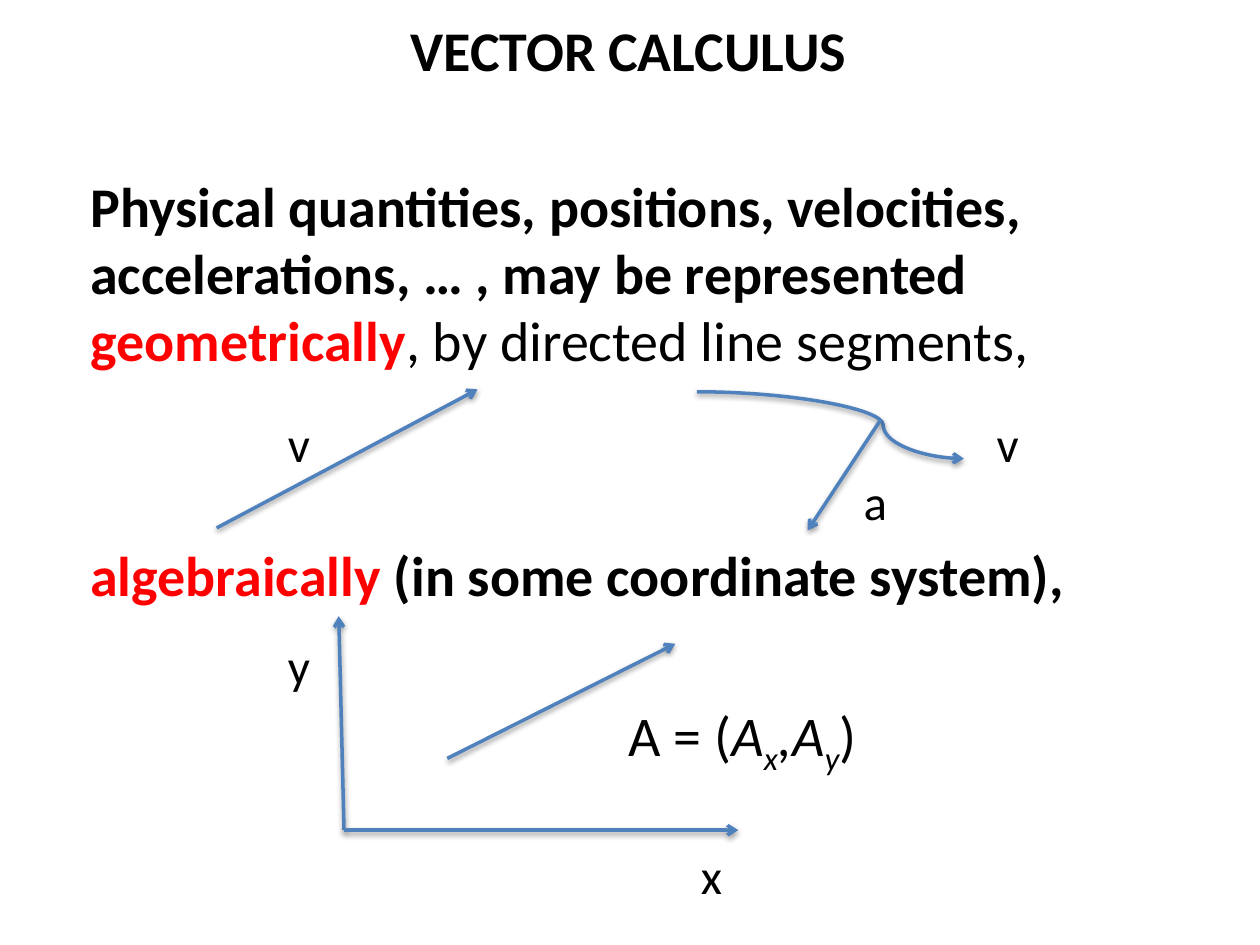
from lxml.etree import SubElement
from pptx import Presentation
from pptx.dml.color import RGBColor
from pptx.enum.shapes import MSO_CONNECTOR
from pptx.enum.text import MSO_ANCHOR, PP_ALIGN
from pptx.oxml.ns import qn
from pptx.util import Pt

FONT = "Calibri"
BLACK, RED, BLUE = "000000", "FF0000", "4F81BD"


def color(hex_code):
    """Turn a hex string into a colour."""
    return RGBColor.from_string(hex_code)


def add_run(paragraph, text, size=32, ink=BLACK, bold=False, italic=False, subscript=False):
    """Append one formatted run to a paragraph."""
    run = paragraph.add_run()
    run.text = text
    font = run.font
    font.name, font.size, font.bold, font.italic = FONT, Pt(size), bold, italic
    font.color.rgb = color(ink)
    if subscript:
        run._r.get_or_add_rPr().set("baseline", "-25000")


def add_text(slide, left, top, width, height, wrap=False):
    """Add a text box and return its first paragraph."""
    frame = slide.shapes.add_textbox(Pt(left), Pt(top), Pt(width), Pt(height)).text_frame
    frame.word_wrap = wrap
    return frame.paragraphs[0]


def add_label(slide, text, left, top):
    """Add a one-letter label."""
    add_run(add_text(slide, left, top, 28, 42), text, size=28)


def add_arrow(slide, origin, start, end, kind=MSO_CONNECTOR.STRAIGHT):
    """Draw a shadowed arrow between two points relative to an origin."""
    left, top = origin
    arrow = slide.shapes.add_connector(
        kind, Pt(left + start[0]), Pt(top + start[1]), Pt(left + end[0]), Pt(top + end[1]))
    arrow.line.color.rgb = color(BLUE)
    arrow.line.width = Pt(2)
    properties = arrow._element.spPr
    SubElement(properties.find(qn("a:ln")), qn("a:tailEnd"), type="arrow")
    effects = SubElement(properties, qn("a:effectLst"))
    shadow = SubElement(effects, qn("a:outerShdw"), blurRad="40000", dist="20000",
                        dir="5400000", rotWithShape="0")
    shade = SubElement(shadow, qn("a:srgbClr"), val=BLACK)
    SubElement(shade, qn("a:alpha"), val="38000")
    return arrow


def place_title(slide, left, top, width, height):
    """Move and format the title."""
    title = slide.shapes.title
    title.left, title.top, title.width, title.height = map(Pt, (left, top, width, height))
    title.text_frame.vertical_anchor = MSO_ANCHOR.MIDDLE
    heading = title.text_frame.paragraphs[0]
    heading.alignment = PP_ALIGN.CENTER
    add_run(heading, "VECTOR CALCULUS", bold=True)


def place_geometric(slide, left, top, width):
    """Place the geometric statement with its velocity and acceleration arrows."""
    statement = add_text(slide, left, top, width, 124, wrap=True)
    add_run(statement, "Physical quantities, positions, velocities, accelerations, … , "
                       "may be represented ", bold=True)
    add_run(statement, "geometrically", ink=RED, bold=True)
    add_run(statement, ", by directed line segments,")

    origin = (left, top)
    add_arrow(slide, origin, (79.2, 207.2), (228.3, 128))
    trajectory = add_arrow(slide, origin, (353.6, 129.4), (506.2, 167.6), MSO_CONNECTOR.CURVE)
    guides = trajectory._element.spPr.find(qn("a:prstGeom")).get_or_add_avLst()
    SubElement(guides, qn("a:gd"), name="adj1", fmla="val 69800")
    add_arrow(slide, origin, (458.7, 145.3), (416.9, 208.6))
    for text, x, y in (("v", 112.8, 138), ("v", 517.9, 138), ("a", 441.9, 171.5)):
        add_label(slide, text, left + x, top + y)


def place_algebraic(slide, left, top, width):
    """Place the algebraic statement with its axes, vector and components."""
    statement = add_text(slide, left, top, width, 46, wrap=True)
    add_run(statement, "algebraically ", ink=RED, bold=True)
    add_run(statement, "(in some coordinate system),", bold=True)

    origin, corner = (left, top), (152, 169)
    add_arrow(slide, origin, corner, (149, 46.7))
    add_arrow(slide, origin, corner, (377.3, 169))
    add_arrow(slide, origin, (211, 128), (341.3, 62.5))
    for text, x, y in (("y", 112.8, 54.5), ("x", 348.8, 174.5)):
        add_label(slide, text, left + x, top + y)

    components = add_text(slide, left + 307.6, top + 91.3, 148.3, 46)
    add_run(components, "A = (")
    add_run(components, "A", italic=True)
    add_run(components, "x", italic=True, subscript=True)
    add_run(components, ",A", italic=True)
    add_run(components, "y", italic=True, subscript=True)
    add_run(components, ")")


def main():
    """Build and save the slide."""
    deck = Presentation()
    deck.slide_width, deck.slide_height = Pt(720), Pt(540)
    slide = deck.slides.add_slide(deck.slide_layouts[5])
    left, width = 44.6, 629.3
    place_title(slide, left, 4, width, 48)
    place_geometric(slide, left, 94.5, width)
    place_algebraic(slide, left, 305.4, width)
    deck.save("out.pptx")


if __name__ == "__main__":
    main()
